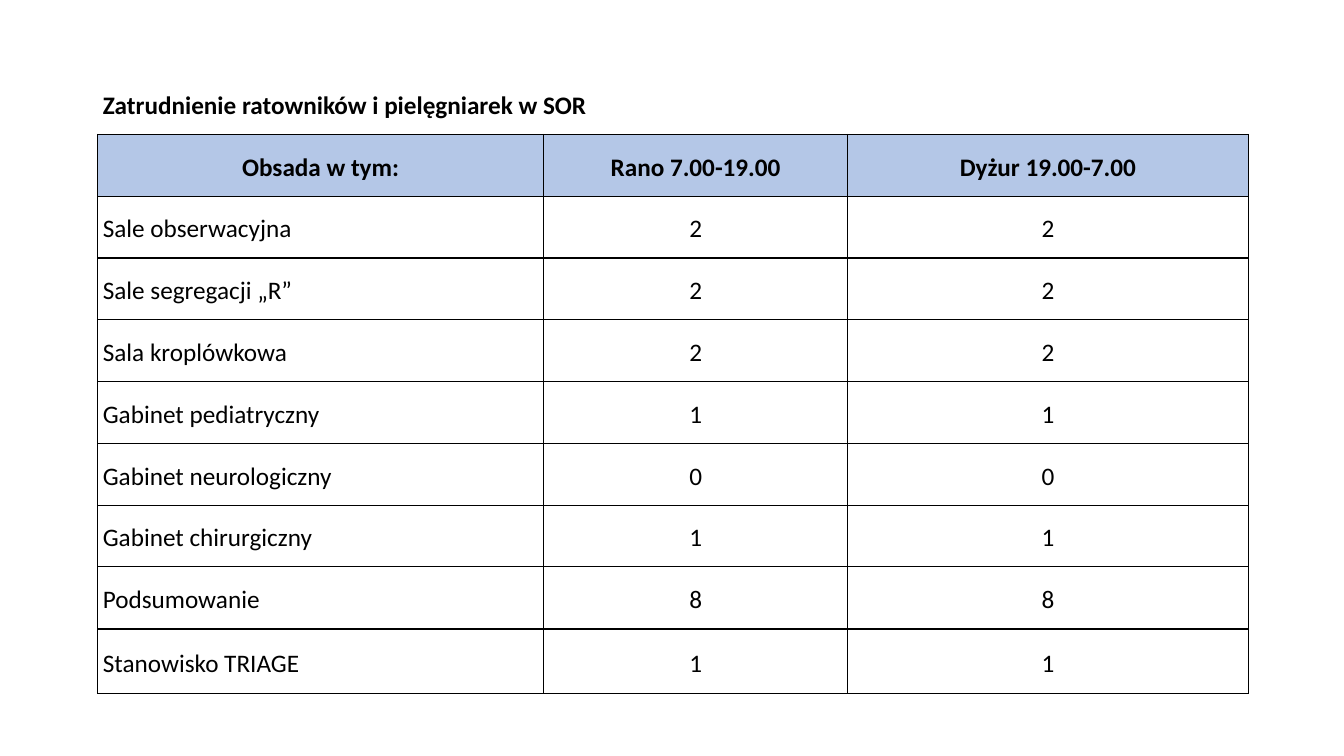
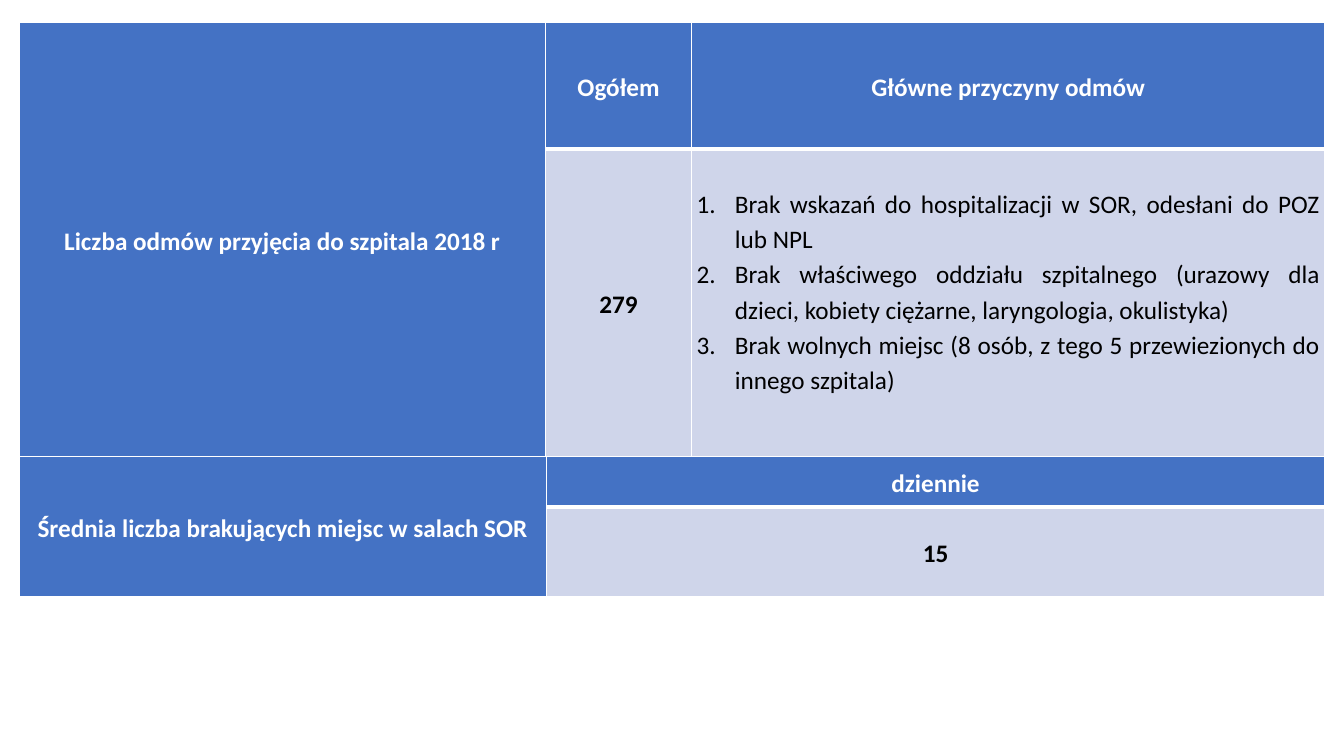
"""Build two slides of tables on emergency ward staffing and refused admissions."""
from dataclasses import dataclass

from lxml.etree import SubElement
from pptx import Presentation
from pptx.dml.color import RGBColor
from pptx.enum.text import MSO_ANCHOR, PP_ALIGN
from pptx.oxml.ns import qn
from pptx.slide import Slide
from pptx.table import _Cell
from pptx.util import Inches, Pt

COLORS = {"black": "000000", "white": "FFFFFF", "header": "B4C7E7",
          "blue": "4472C4", "pale": "CFD5EA"}
FONT = "Calibri"
SIZE = 18
LINE_SPACING = 1.15
INDENT = 0.38
SIDES = ("L", "R", "T", "B")


@dataclass(frozen=True)
class CellStyle:
    """Look of a table cell; borders are widths in points, left, right, top, bottom."""
    fill: str | None = None
    color: str = "black"
    bold: bool = False
    align: PP_ALIGN = PP_ALIGN.CENTER
    line: str = "black"
    borders: tuple[int, int, int, int] = (1, 1, 1, 1)
    numbered: bool = False
    anchor: MSO_ANCHOR = MSO_ANCHOR.MIDDLE
    top: float = 0


@dataclass(frozen=True)
class Entry:
    """Text and look of one cell, with the number of rows and columns it spans."""
    row: int
    col: int
    text: str
    style: CellStyle
    rows: int = 1
    cols: int = 1


@dataclass(frozen=True)
class Grid:
    """Position, column widths, row heights and entries of a table."""
    left: float
    top: float
    widths: tuple[float, ...]
    heights: tuple[float, ...]
    entries: list[Entry]


CAPTION = CellStyle(bold=True, align=PP_ALIGN.LEFT, borders=(0, 0, 0, 1))
HEADER = CellStyle(fill="header", bold=True)
LABEL = CellStyle(align=PP_ALIGN.LEFT)
VALUE = CellStyle()
BLUE = CellStyle(fill="blue", color="white", bold=True, line="white", borders=(1, 1, 1, 3))
SIDE = CellStyle(fill="blue", color="white", bold=True, line="white")
TOTAL = CellStyle(fill="pale", bold=True, line="white")
REASONS = CellStyle(fill="pale", align=PP_ALIGN.JUSTIFY, line="white", numbered=True,
                    anchor=MSO_ANCHOR.TOP, top=0.35)

STAFF = [
    ("Sale obserwacyjna", "2", "2"),
    ("Sale segregacji „R”", "2", "2"),
    ("Sala kroplówkowa", "2", "2"),
    ("Gabinet pediatryczny", "1", "1"),
    ("Gabinet neurologiczny", "0", "0"),
    ("Gabinet chirurgiczny", "1", "1"),
    ("Podsumowanie", "8", "8"),
]
TRIAGE = [("Stanowisko TRIAGE", "1", "1")]
REFUSALS = "\n".join((
    "Brak wskazań do hospitalizacji w SOR, odesłani do POZ lub NPL",
    "Brak właściwego oddziału szpitalnego (urazowy dla dzieci, kobiety ciężarne, "
    "laryngologia, okulistyka)",
    "Brak wolnych miejsc (8 osób, z tego 5 przewiezionych do innego szpitala)",
))


def write(cell: _Cell, text: str, *, color: str, bold: bool, align: PP_ALIGN,
          numbered: bool) -> None:
    """Fill a cell with one formatted paragraph per line of text."""
    tf = cell.text_frame
    tf.word_wrap = True
    for i, line in enumerate(text.split("\n")):
        p = tf.add_paragraph() if i else tf.paragraphs[0]
        p.alignment, p.line_spacing = align, LINE_SPACING
        r = p.add_run()
        r.text = line
        r.font.name, r.font.size, r.font.bold = FONT, Pt(SIZE), bold
        r.font.color.rgb = RGBColor.from_string(COLORS[color])
        if numbered:
            pPr = p._p.get_or_add_pPr()
            pPr.set("marL", str(Inches(INDENT)))
            pPr.set("indent", str(-Inches(INDENT)))
            SubElement(pPr, qn("a:buAutoNum"), type="arabicPeriod")


def decorate(cell: _Cell, style: CellStyle) -> None:
    """Set the margins, borders and fill of a cell."""
    cell.vertical_anchor = style.anchor
    cell.margin_left = cell.margin_right = Inches(0.05)
    cell.margin_top, cell.margin_bottom = Inches(style.top), 0
    tcPr = cell._tc.get_or_add_tcPr()
    for side, width in zip(SIDES, style.borders):
        ln = SubElement(tcPr, qn(f"a:ln{side}"), w=str(Pt(width)))
        if width:
            fill = SubElement(ln, qn("a:solidFill"))
            SubElement(fill, qn("a:srgbClr"), val=COLORS[style.line])
        else:
            SubElement(ln, qn("a:noFill"))
    if style.fill:
        cell.fill.solid()
        cell.fill.fore_color.rgb = RGBColor.from_string(COLORS[style.fill])
    else:
        cell.fill.background()


def draw(s: Slide, grid: Grid) -> None:
    """Add a table to a slide."""
    table = s.shapes.add_table(
        len(grid.heights), len(grid.widths), Inches(grid.left), Inches(grid.top),
        Inches(sum(grid.widths)), Inches(sum(grid.heights))).table
    for column, width in zip(table.columns, grid.widths):
        column.width = Inches(width)
    for row, height in zip(table.rows, grid.heights):
        row.height = Inches(height)
    for e in grid.entries:
        cell, style = table.cell(e.row, e.col), e.style
        for i in range(e.row, e.row + e.rows):
            for j in range(e.col, e.col + e.cols):
                decorate(table.cell(i, j), style)
        if e.rows * e.cols > 1:
            cell.merge(table.cell(e.row + e.rows - 1, e.col + e.cols - 1))
        write(cell, e.text, color=style.color, bold=style.bold, align=style.align,
              numbered=style.numbered)


def staff_entries(records: list[tuple[str, str, str]], first: int = 0) -> list[Entry]:
    """Return entries for staffing records, from the given row down."""
    return [Entry(first + i, j, text, VALUE if j else LABEL)
            for i, record in enumerate(records) for j, text in enumerate(record)]


def staffing_grids() -> list[Grid]:
    """Return the tables of the staffing slide."""
    left, top, height, widths = 0.97, 0.72, 5.52, (4.42, 3.02, 3.97)
    count = len(STAFF) + 2
    titles = ("Obsada w tym:", "Rano 7.00-19.00", "Dyżur 19.00-7.00")
    entries = [Entry(0, 0, "Zatrudnienie ratowników i pielęgniarek w SOR", CAPTION, cols=3)]
    entries += [Entry(1, j, title, HEADER) for j, title in enumerate(titles)]
    entries += staff_entries(STAFF, 2)
    return [Grid(left, top, widths, (height / count,) * count, entries),
            Grid(left, top + height, widths, (0.64,), staff_entries(TRIAGE))]


def refusal_grids() -> list[Grid]:
    """Return the tables of the refused admissions slide."""
    left, top, heights = 0.19, 0.22, (1.26, 3.05)
    refusals = [
        Entry(0, 0, "Liczba odmów przyjęcia do szpitala 2018 r", SIDE, rows=2),
        Entry(0, 1, "Ogółem", BLUE),
        Entry(0, 2, "Główne przyczyny odmów", BLUE),
        Entry(1, 1, "279", TOTAL),
        Entry(1, 2, REFUSALS, REASONS),
    ]
    shortage = [
        Entry(0, 0, "Średnia liczba brakujących miejsc w salach SOR", SIDE, rows=2),
        Entry(0, 1, "dziennie", BLUE),
        Entry(1, 1, "15", TOTAL),
    ]
    return [Grid(left, top, (5.22, 1.45, 6.28), heights, refusals),
            Grid(left, top + sum(heights), (5.23, 7.72), (0.5, 0.89), shortage)]


def main() -> None:
    """Build and save the presentation."""
    prs = Presentation()
    prs.slide_width, prs.slide_height = Inches(13.33), Inches(7.5)
    for grids in (staffing_grids(), refusal_grids()):
        s = prs.slides.add_slide(prs.slide_layouts[6])
        for grid in grids:
            draw(s, grid)
    prs.save("out.pptx")


if __name__ == "__main__":
    main()
